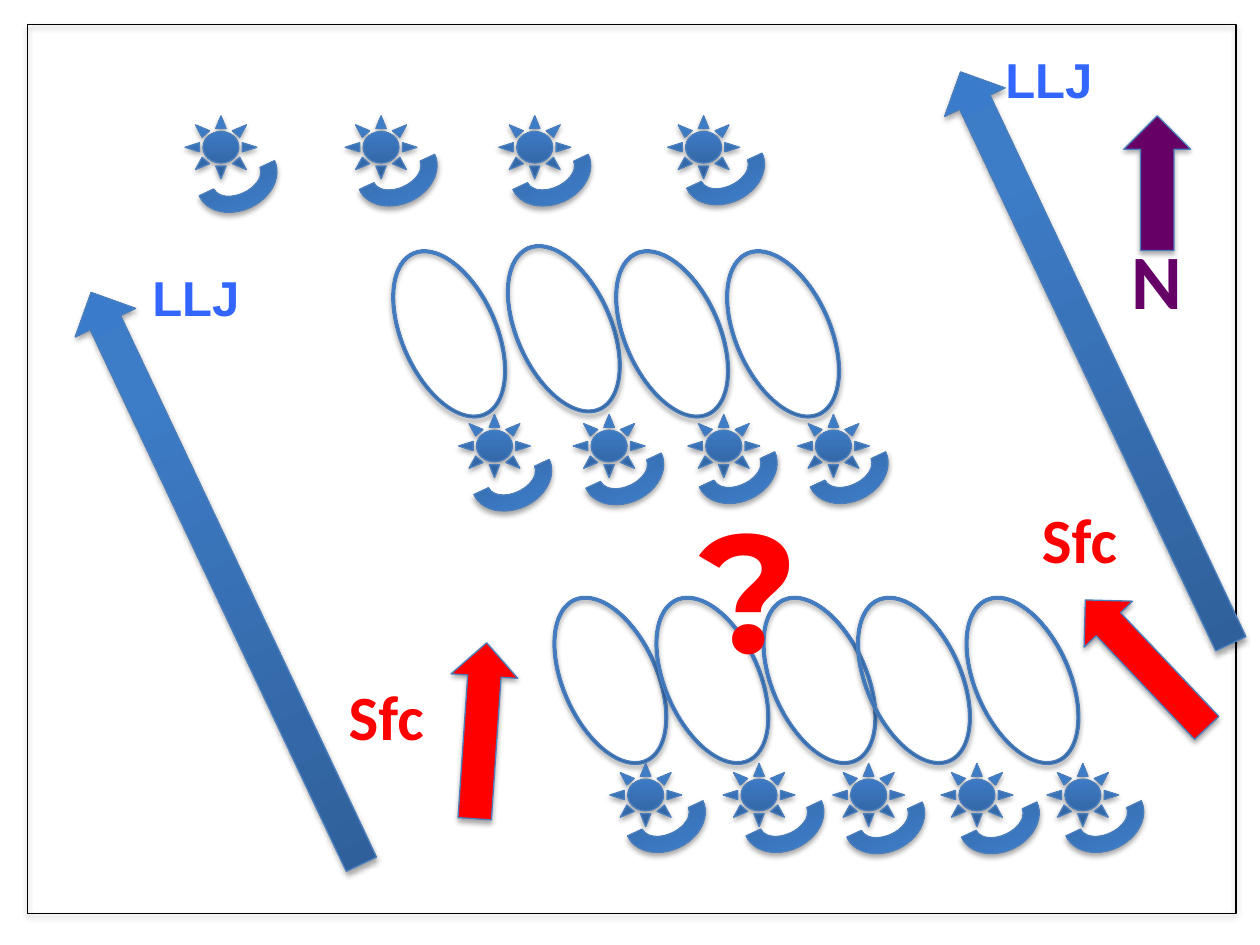
from copy import deepcopy

from pptx import Presentation
from pptx.dml.color import RGBColor
from pptx.enum.shapes import MSO_SHAPE
from pptx.enum.text import MSO_AUTO_SIZE
from pptx.oxml.ns import qn
from pptx.oxml.xmlchemy import OxmlElement
from pptx.util import Pt

RECTANGLE = MSO_SHAPE.RECTANGLE
SUN = MSO_SHAPE.SUN
DONUT = MSO_SHAPE.DONUT
BLOCK_ARC = MSO_SHAPE.BLOCK_ARC
UP_ARROW = MSO_SHAPE.UP_ARROW
FIT_SHAPE = MSO_AUTO_SIZE.SHAPE_TO_FIT_TEXT

BLUE_STOPS = [(0, "2F5F99"), (0.8, "3D7CC7"), (1, "3A7CCB")]
OUTLINE = "4B7EBC"
RED = "FF0000"
PURPLE = "660066"
JET_BLUE = "3366FF"


def color(hex_string):
    return RGBColor.from_string(hex_string)


def fill_gradient(shape):
    shape.fill.gradient()
    shape.fill.gradient_angle = 90
    stop_list = shape._element.spPr.find(qn("a:gradFill")).find(qn("a:gsLst"))
    stop_list.insert(1, deepcopy(stop_list[0]))
    for stop, (position, hex_string) in zip(shape.fill.gradient_stops, BLUE_STOPS):
        stop.position = position
        stop.color.rgb = color(hex_string)


def add_shadow(shape):
    shape.shadow.inherit = False
    shadow = OxmlElement("a:outerShdw")
    settings = {"blurRad": Pt(3.1), "dist": Pt(1.8), "dir": 5400000, "rotWithShape": 0}
    for name, value in settings.items():
        shadow.set(name, str(value))
    shade = OxmlElement("a:srgbClr")
    shade.set("val", "000000")
    alpha = OxmlElement("a:alpha")
    alpha.set("val", "35000")
    shade.append(alpha)
    shadow.append(shade)
    shape._element.spPr.find(qn("a:effectLst")).append(shadow)


def add_figure(slide, kind, left, top, width, height, rotation=0, fill=None):
    shape = slide.shapes.add_shape(kind, Pt(left), Pt(top), Pt(width), Pt(height))
    shape.rotation = rotation
    if fill:
        shape.fill.solid()
        shape.fill.fore_color.rgb = color(fill)
    else:
        fill_gradient(shape)
    shape.line.color.rgb = color(OUTLINE)
    shape.line.width = Pt(0.75)
    add_shadow(shape)
    return shape


def add_label(slide, text, left, top, width, height, size, font_name, hex_string):
    box = slide.shapes.add_textbox(Pt(left), Pt(top), Pt(width), Pt(height))
    frame = box.text_frame
    frame.word_wrap = False
    frame.auto_size = FIT_SHAPE
    run = frame.paragraphs[0].add_run()
    run.text = text
    run.font.size = Pt(size)
    run.font.name = font_name
    run.font.bold = True
    run.font.color.rgb = color(hex_string)


def add_border(slide, left, top, width, height):
    border = add_figure(slide, RECTANGLE, left, top, width, height)
    border.fill.background()
    border.line.color.rgb = color("000000")


def add_cells(slide, left, top, offsets):
    for across, down in offsets:
        cell = add_figure(slide, DONUT, left + across, top + down, 55.4, 102.2, 336)
        cell.adjustments[0] = 0.029


def add_eddies(slide, left, top, offsets):
    for sun_across, arc_across, arc_down in offsets:
        sun_left = left + sun_across
        add_figure(slide, SUN, sun_left, top, 41, 36)
        add_figure(slide, BLOCK_ARC, sun_left + arc_across, top + arc_down,
                   47.5, 36.7, 155)


def add_jet(slide, left, top, label_across, label_down):
    add_figure(slide, UP_ARROW, left, top, 38.2, 361.4, 334.7)
    add_label(slide, "LLJ", left + label_across, top + label_down,
              65.5, 41, 28, "Arial", JET_BLUE)


def add_surface_wind(slide, left, top, rotation, label_across, label_down):
    add_figure(slide, UP_ARROW, left, top, 38.2, 100.8, rotation, RED)
    add_label(slide, "Sfc", left + label_across, top + label_down,
              58.3, 51, 36, "Calibri", RED)


def add_north(slide, left, top):
    add_figure(slide, UP_ARROW, left, top, 38.2, 77, 0, PURPLE)
    add_label(slide, "N", left - 2.9, top + 63.4, 44, 60.5, 44, "Calibri", PURPLE)


def main():
    presentation = Presentation()
    presentation.slide_width = Pt(720)
    presentation.slide_height = Pt(540)
    slide = presentation.slides.add_slide(presentation.slide_layouts[6])

    add_border(slide, 15.8, 14.2, 690.5, 508)
    add_north(slide, 642.2, 66.2)

    add_eddies(slide, 105.8, 66.2, [
        (0, 5.8, 17.3), (91.5, 5.8, 13.7), (179.3, 5.8, 13.7), (275.8, 8.6, 13)])

    add_cells(slide, 229, 139.7, [(0, 0), (65.5, -2.9), (127.4, 0), (190.8, 0)])
    add_eddies(slide, 262.1, 236.9, [
        (0, 6.5, 17.3), (65.5, 5, 13.7), (131, 4.3, 13), (193.7, 5, 13)])

    add_cells(slide, 321.1, 337.7, [
        (0, 0), (58.3, 0), (119.5, 0), (173.5, 0), (235.5, 0)])
    add_eddies(slide, 348.5, 436.3, [
        (0, 7.9, 13), (64.8, 10.8, 13), (127.4, 5.8, 13.7),
        (189.3, 9.4, 13.7), (249.8, 8.6, 13)])

    add_jet(slide, 110.2, 149.8, -30.2, -0.7)
    add_jet(slide, 607, 23.8, -39.6, 0.7)
    add_surface_wind(slide, 255.6, 367.2, 3.9, -63.4, 16.6)
    add_surface_wind(slide, 635.8, 329, 316.5, -47.5, -46.8)
    add_label(slide, "?", 392.4, 273.6, 73.4, 123.8, 96, "Montserrat", RED)

    presentation.save("out.pptx")


if __name__ == "__main__":
    main()
